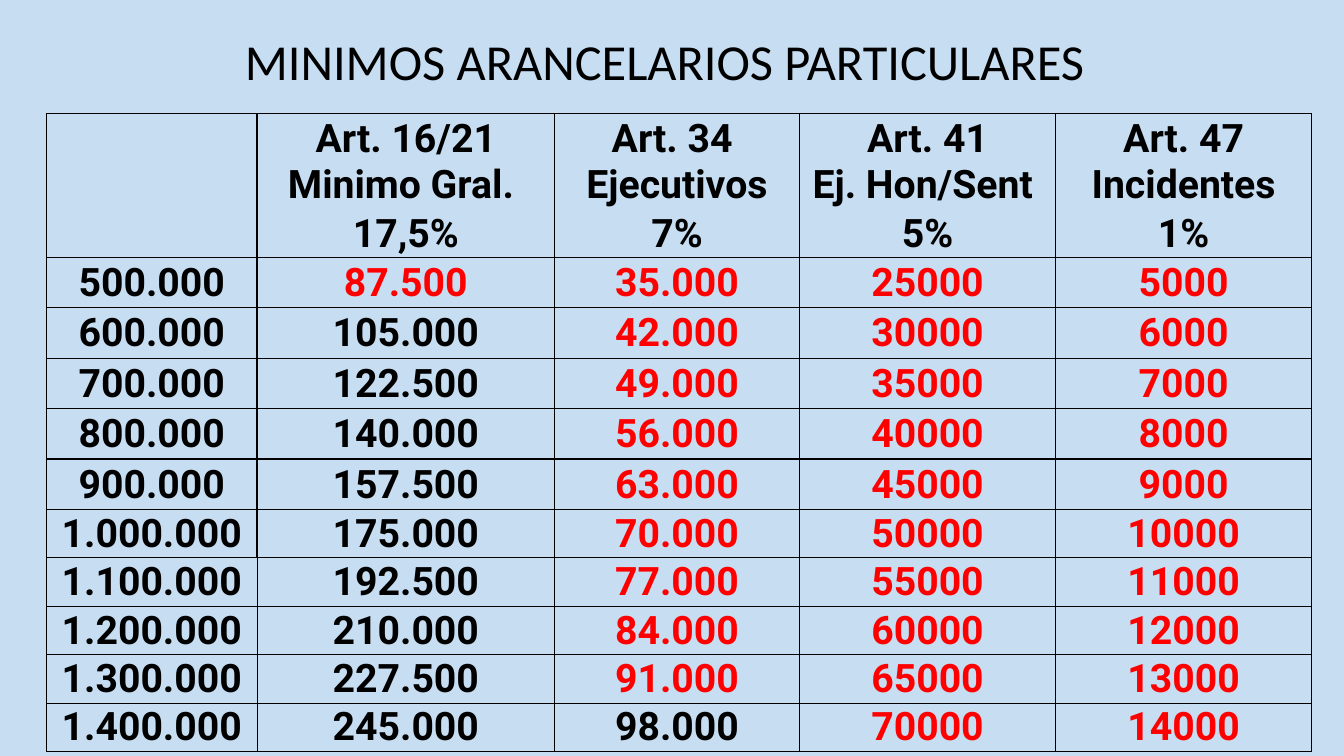
import pptx
import pptx.util
import pptx.dml.color
import pptx.enum.text
import pptx.oxml
import pptx.oxml.ns

EMU_PER_PX = 9144  # 100 px to the inch
BLACK, RED, SKY = "000000", "FF0000", "C7DDF1"
TITLE_FONT = {"name": "Calibri", "size": pptx.util.Pt(36)}
CELL_FONT = {"name": "Roboto", "size": pptx.util.Pt(28), "bold": True}


def px(n):
    return pptx.util.Emu(n * EMU_PER_PX)


def rgb(code):
    return pptx.dml.color.RGBColor.from_string(code)


class Deck:
    def __init__(self, width, height, background):
        self.prs = pptx.Presentation()
        self.prs.slide_width, self.prs.slide_height = px(width), px(height)
        self.s = self.prs.slides.add_slide(self.prs.slide_layouts[6])
        fill = self.s.background.fill
        fill.solid()
        fill.fore_color.rgb = rgb(background)

    def run(self, p, text, font, color):
        r = p.add_run()
        r.text = text
        for key, value in font.items():
            setattr(r.font, key, value)
        r.font.color.rgb = rgb(color)

    def title(self, text, x, y, w, h):
        sp = self.s.shapes.add_textbox(px(x), px(y), px(w), px(h))
        tf = sp.text_frame
        tf.word_wrap = True
        tf.auto_size = pptx.enum.text.MSO_AUTO_SIZE.SHAPE_TO_FIT_TEXT
        self.run(tf.paragraphs[0], text, TITLE_FONT, BLACK)

    def table(self, x, y, widths, heights):
        sp = self.s.shapes.add_table(len(heights), len(widths), px(x), px(y),
                                     px(sum(widths)), px(sum(heights)))
        table = sp.table
        table.first_row = table.horz_banding = False
        for col, w in zip(table.columns, widths):
            col.width = px(w)
        for row, h in zip(table.rows, heights):
            row.height = px(h)
        return table

    def cell(self, cell, lines, color, borders):
        cell.fill.background()
        self.borders(cell, borders)
        layout = {"margin_left": px(1), "margin_top": px(1),
                  "margin_right": px(1), "margin_bottom": 0,
                  "vertical_anchor": pptx.enum.text.MSO_ANCHOR.MIDDLE}
        for key, value in layout.items():
            setattr(cell, key, value)
        tf = cell.text_frame
        for i, line in enumerate(lines):
            p = tf.add_paragraph() if i else tf.paragraphs[0]
            p.alignment = pptx.enum.text.PP_ALIGN.CENTER
            self.run(p, line, CELL_FONT, color)

    def borders(self, cell, points):
        """Line width in points for the sides L, R, T, B; 0 draws no line."""
        tcPr = cell._tc.get_or_add_tcPr()
        ns = pptx.oxml.ns.nsdecls("a")
        for i, (side, pt) in enumerate(zip("LRTB", points)):
            paint = (f'<a:solidFill><a:srgbClr val="{BLACK}"/></a:solidFill>'
                     if pt else "<a:noFill/>")
            tcPr.insert(i, pptx.oxml.parse_xml(
                f'<a:ln{side} {ns} w="{int(pt * 12700)}">{paint}</a:ln{side}>'))


def dotted(n):
    return f"{n:,}".replace(",", ".")


# Column headings, with the rate in tenths of a percent
COLUMNS = [
    (["Art. 16/21", "Minimo Gral. "], "17,5%", 175, dotted),
    (["Art. 34 ", "Ejecutivos"], "7%", 70, dotted),
    (["Art. 41", "Ej. Hon/Sent "], "5%", 50, str),
    (["Art. 47", "Incidentes"], "1%", 10, str),
]
AMOUNTS = range(500000, 1400001, 100000)
RED_BELOW = 95000  # fees under this are shown in red


def main():
    deck = Deck(1333, 750, SKY)
    deck.title("MINIMOS ARANCELARIOS PARTICULARES", 233, 25, 882, 71)
    table = deck.table(46, 113, [209, 295, 243, 254, 254],
                       [46, 48] + [50] * 5 + [48] * 5)

    # Two heading rows without a line between them
    headings = [([], [])] + [(name, [rate]) for name, rate, _, _ in COLUMNS]
    for c, (name, rate) in enumerate(headings):
        deck.cell(table.cell(0, c), name, BLACK, (1, 1, 1, 0))
        deck.cell(table.cell(1, c), rate, BLACK, (1, 1, 0, 1))

    # Amounts and fees; lines are thinner from 1.000.000 down
    for r, amount in enumerate(AMOUNTS, 2):
        upper = 1 if amount <= 1000000 else 0.5
        lower = 1 if amount < 1000000 else 0.5
        lines = (upper, upper, upper, lower)
        deck.cell(table.cell(r, 0), [dotted(amount)], BLACK, lines)
        for c, (_, _, rate, show) in enumerate(COLUMNS, 1):
            fee = amount * rate // 1000
            color = RED if fee < RED_BELOW else BLACK
            deck.cell(table.cell(r, c), [show(fee)], color, lines)

    deck.prs.save("out.pptx")


if __name__ == "__main__":
    main()
